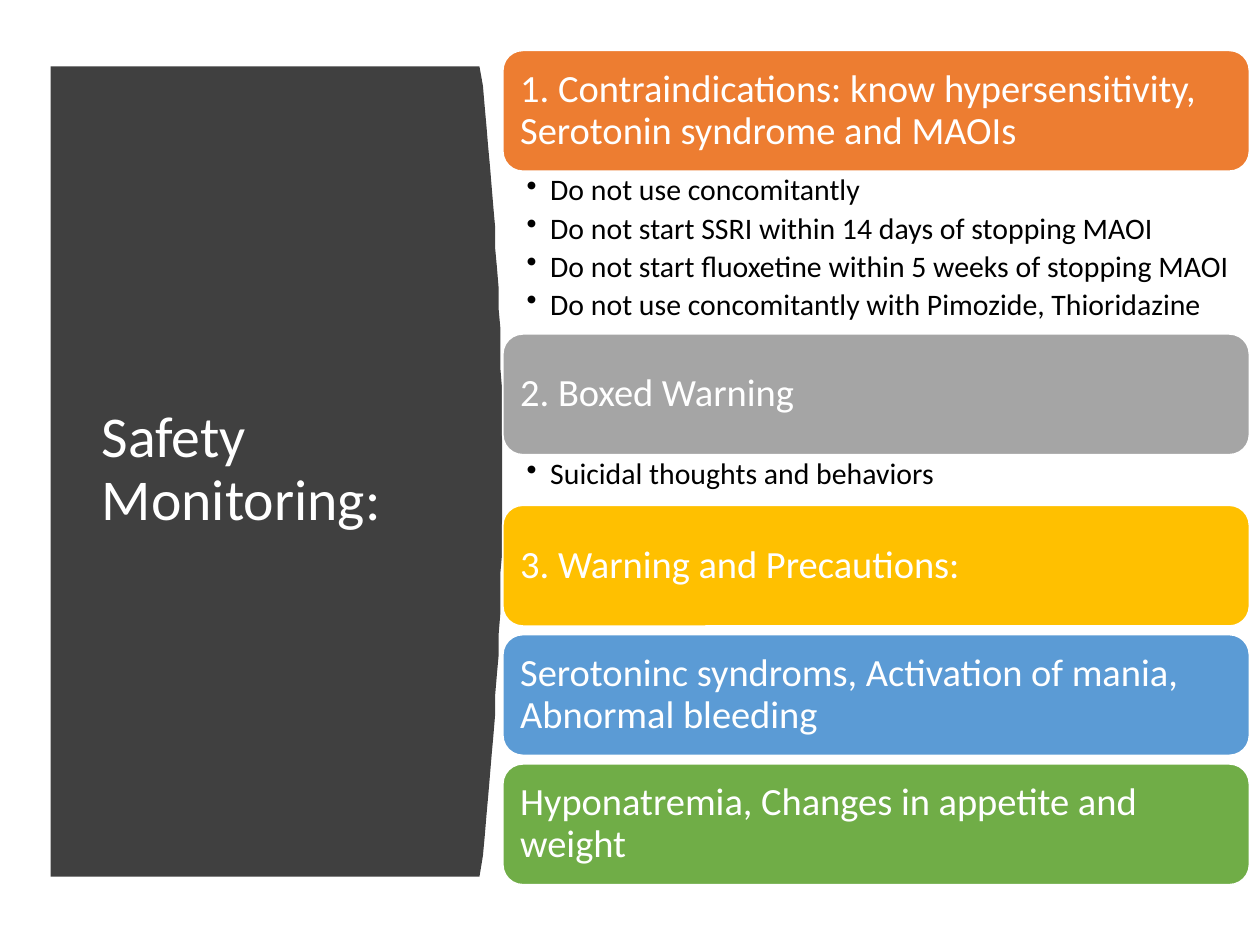
from dataclasses import dataclass
from lxml.etree import SubElement
from pptx import Presentation
from pptx.dml.color import RGBColor
from pptx.enum.shapes import MSO_SHAPE
from pptx.enum.text import MSO_ANCHOR, PP_ALIGN
from pptx.oxml.ns import qn
from pptx.util import Pt


@dataclass(frozen=True)
class Theme:
    """Hold the colours, font and type sizes."""
    font: str = "Calibri"
    white: str = "FFFFFF"
    black: str = "000000"
    panel: str = "404040"
    title: int = 33
    head: int = 22
    body: int = 17


THEME = Theme()
TITLE = "Safety Monitoring:"
TOPICS = [
    ("1. Contraindications: know hypersensitivity, Serotonin syndrome and MAOIs",
     "ED7D31", 92.9, [
         "Do not use concomitantly",
         "Do not start SSRI within 14 days of stopping MAOI",
         "Do not start fluoxetine within 5 weeks of stopping MAOI",
         "Do not use concomitantly with Pimozide, Thioridazine"]),
    ("2. Boxed Warning", "A5A5A5", 28.8, ["Suicidal thoughts and behaviors"]),
    ("3. Warning and Precautions:", "FFC000", 4.8, []),
    ("Serotoninc syndroms, Activation of mania, Abnormal bleeding",
     "5B9BD5", 4.8, []),
    ("Hyponatremia, Changes in appetite and weight", "70AD47", 4.8, []),
]


def assign(target, values):
    """Set each attribute named in a dict."""
    for name, value in values.items():
        setattr(target, name, value)


def paint(shape, fill, line=None):
    """Give a shape a flat fill, an optional line and no shadow."""
    shape.shadow.inherit = False
    shape.fill.solid()
    shape.fill.fore_color.rgb = RGBColor.from_string(fill)
    if line:
        shape.line.color.rgb = RGBColor.from_string(line)
        shape.line.width = Pt(1)
    else:
        shape.line.fill.background()


def write(shape, lines, size, color, insets, anchor=MSO_ANCHOR.MIDDLE, after=0):
    """Fill a shape with left-aligned paragraphs."""
    frame = shape.text_frame
    sides = ("left", "top", "right", "bottom")
    assign(frame, {"text": "\n".join(lines), "word_wrap": True,
                   "vertical_anchor": anchor,
                   **{f"margin_{s}": Pt(v) for s, v in zip(sides, insets)}})
    for para in frame.paragraphs:
        assign(para, {"alignment": PP_ALIGN.LEFT, "line_spacing": 0.9,
                      "space_after": Pt(after)})
        assign(para.font, {"name": THEME.font, "size": Pt(size)})
        para.font.color.rgb = RGBColor.from_string(color)
    return frame


def add_panel(slide, left, top, width, height, bulge=13, steps=40):
    """Draw the dark panel with its bowed right edge and the title."""
    edge = [(left + width - bulge * (2 * i / steps - 1) ** 2,
             top + height * i / steps) for i in range(steps + 1)]
    path = slide.shapes.build_freeform(left, top, scale=Pt(1))
    path.add_line_segments(edge + [(left, top + height)], close=True)
    paint(path.convert_to_shape(), THEME.panel)
    box = slide.shapes.add_textbox(
        Pt(left + 22.3), Pt(top + 42.5), Pt(width - 57), Pt(height - 86))
    write(box, [TITLE], THEME.title, THEME.white, (7.2, 3.6, 7.2, 3.6))


def add_notes(slide, lines, left, top, width, height):
    """Place a bulleted list under a bar."""
    box = slide.shapes.add_textbox(Pt(left), Pt(top), Pt(width), Pt(height))
    frame = write(box, lines, THEME.body, THEME.black, (13.6, 2.2, 4, 2.2),
                  MSO_ANCHOR.TOP, 3.4)
    for para in frame.paragraphs:
        props = para._p.get_or_add_pPr()
        props.set("marL", str(Pt(13.5)))
        props.set("indent", str(-Pt(13.5)))
        SubElement(props, qn("a:buChar"), char="•")


def add_topics(slide, left, top, width, bar=69.1):
    """Stack the coloured bars, each followed by its list or a gap."""
    for head, color, below, lines in TOPICS:
        shape = slide.shapes.add_shape(
            MSO_SHAPE.ROUNDED_RECTANGLE, Pt(left), Pt(top), Pt(width), Pt(bar))
        paint(shape, color, THEME.white)
        write(shape, [head], THEME.head, THEME.white, (6.6,) * 4)
        top += bar
        if lines:
            add_notes(slide, lines, left, top, width, below)
        top += below


def main():
    """Build and save the slide."""
    deck = Presentation()
    assign(deck, {"slide_width": Pt(720), "slide_height": Pt(540)})
    slide = deck.slides.add_slide(deck.slide_layouts[6])
    add_panel(slide, 28.8, 37.5, 258.5, 463.5)
    add_topics(slide, 287.3, 28.8, 426.7)
    deck.save("out.pptx")


if __name__ == "__main__":
    main()
